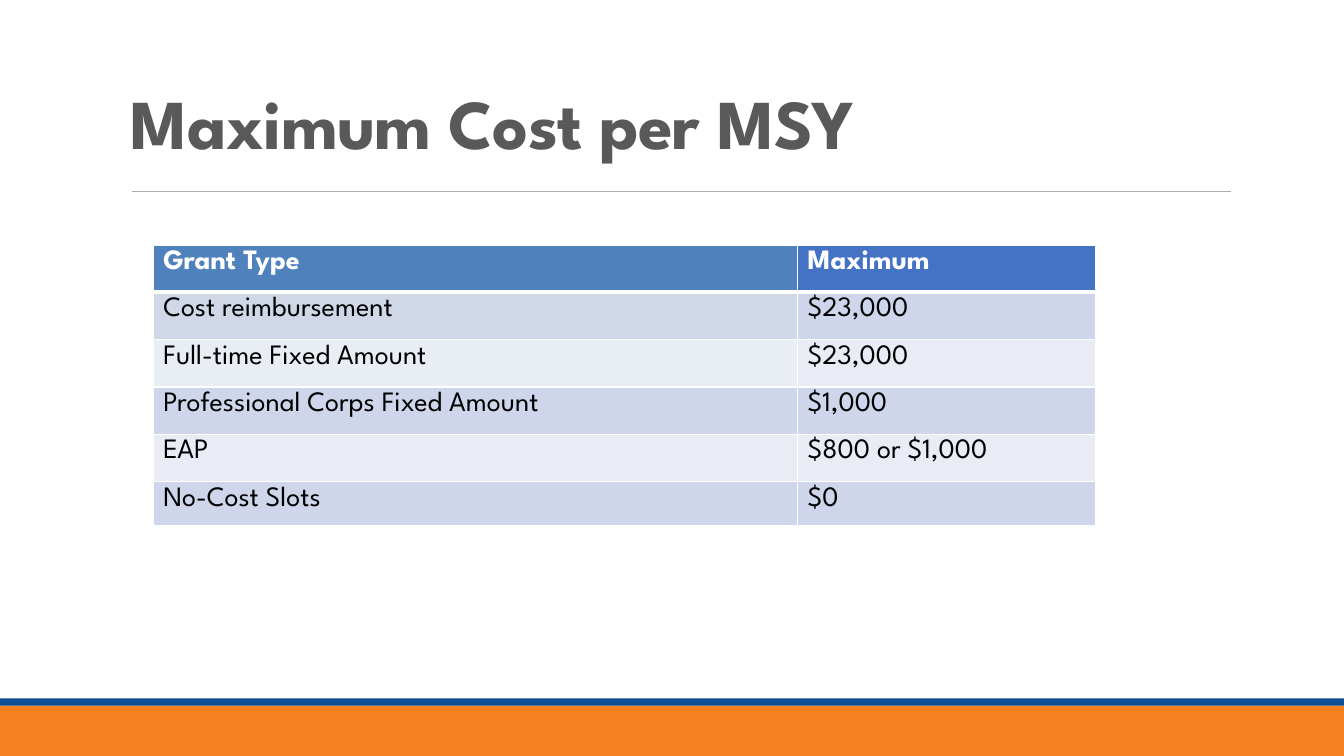
from lxml import etree
from pptx import Presentation
from pptx.dml.color import RGBColor
from pptx.enum.shapes import MSO_CONNECTOR as Connector, MSO_SHAPE as Preset
from pptx.enum.text import MSO_ANCHOR as Anchor
from pptx.oxml.ns import qn
from pptx.util import Inches, Pt

FONT = "League Spartan"
COLORS = {
    "orange": "F5801F", "navy": "0D4E95", "rule": "ACACAC", "title": "595959",
    "white": "FFFFFF", "black": "000000",
    "header_left": "4F81BD", "header_right": "4472C4",
    "first_left": "D0D8E8", "second_left": "E9EDF4",
    "band_dark": "CFD5EA", "band_light": "E9EBF5",
}


def add_run(paragraph, text, size, color, bold):
    run = paragraph.add_run()
    run.text = text
    run.font.name = FONT
    run.font.size = Pt(size)
    run.font.bold = bold
    run.font.color.rgb = RGBColor.from_string(COLORS[color])
    return run


def add_border(cell, side, width):
    properties = cell._tc.get_or_add_tcPr()
    line = etree.SubElement(properties, qn(f"a:ln{side}"), w=str(Pt(width)))
    fill = etree.SubElement(line, qn("a:solidFill"))
    etree.SubElement(fill, qn("a:srgbClr"), val=COLORS["white"])


presentation = Presentation()
presentation.slide_width = Inches(13.33)
presentation.slide_height = Inches(7.5)
slide = presentation.slides.add_slide(presentation.slide_layouts[6])

# Footer bands
for top, height, color in [(7, 0.5, "orange"), (6.93, 0.07, "navy")]:
    band = slide.shapes.add_shape(
        Preset.RECTANGLE, 0, Inches(top), presentation.slide_width, Inches(height))
    band.shadow.inherit = False
    band.fill.solid()
    band.fill.fore_color.rgb = RGBColor.from_string(COLORS[color])
    band.line.fill.background()

# Rule under the title
rule = slide.shapes.add_connector(
    Connector.STRAIGHT, Inches(1.31), Inches(1.9), Inches(12.21), Inches(1.9))
rule.line.color.rgb = RGBColor.from_string(COLORS["rule"])
rule.line.width = Pt(0.5)
etree.SubElement(rule._element.spPr, qn("a:effectLst"))

# Title
title = slide.shapes.add_textbox(Inches(1.2), Inches(0.73), Inches(11), Inches(0.94))
title.text_frame.word_wrap = True
title.text_frame.vertical_anchor = Anchor.BOTTOM
paragraph = title.text_frame.paragraphs[0]
paragraph.line_spacing = 0.85
title_run = add_run(paragraph, "Maximum Cost per MSY", 50, "title", True)
title_run.font._element.set("spc", "-50")

# Grant table: two texts and two fills per row
grants = [
    ("Grant Type", "Maximum", "header_left", "header_right"),
    ("Cost reimbursement", "$23,000", "first_left", "band_dark"),
    ("Full-time Fixed Amount", "$23,000", "second_left", "band_light"),
    ("Professional Corps Fixed Amount", "$1,000", "band_dark", "band_dark"),
    ("EAP", "$800 or $1,000", "band_light", "band_light"),
    ("No-Cost Slots", "$0", "band_dark", "band_dark"),
]
table = slide.shapes.add_table(
    len(grants), 2, Inches(1.52), Inches(2.43), Inches(9.35), Inches(2.71)).table
for column, width in zip(table.columns, (6.39, 2.96)):
    column.width = Inches(width)
for row in table.rows:
    row.height = Inches(0.47)
table.rows[len(grants) - 1].height = Inches(0.36)

for row_index, (grant, maximum, left_fill, right_fill) in enumerate(grants):
    is_header = row_index == 0
    for column_index, (text, fill) in enumerate([(grant, left_fill), (maximum, right_fill)]):
        cell = table.cell(row_index, column_index)
        # Thick border between the header and the first grant
        widths = {"L": 1, "R": 1, "T": 3 if row_index == 1 else 1, "B": 3 if is_header else 1}
        for side, width in widths.items():
            add_border(cell, side, width)
        cell.fill.solid()
        cell.fill.fore_color.rgb = RGBColor.from_string(COLORS[fill])
        add_run(cell.text_frame.paragraphs[0], text, 20,
                "white" if is_header else "black", is_header)

presentation.save("out.pptx")
